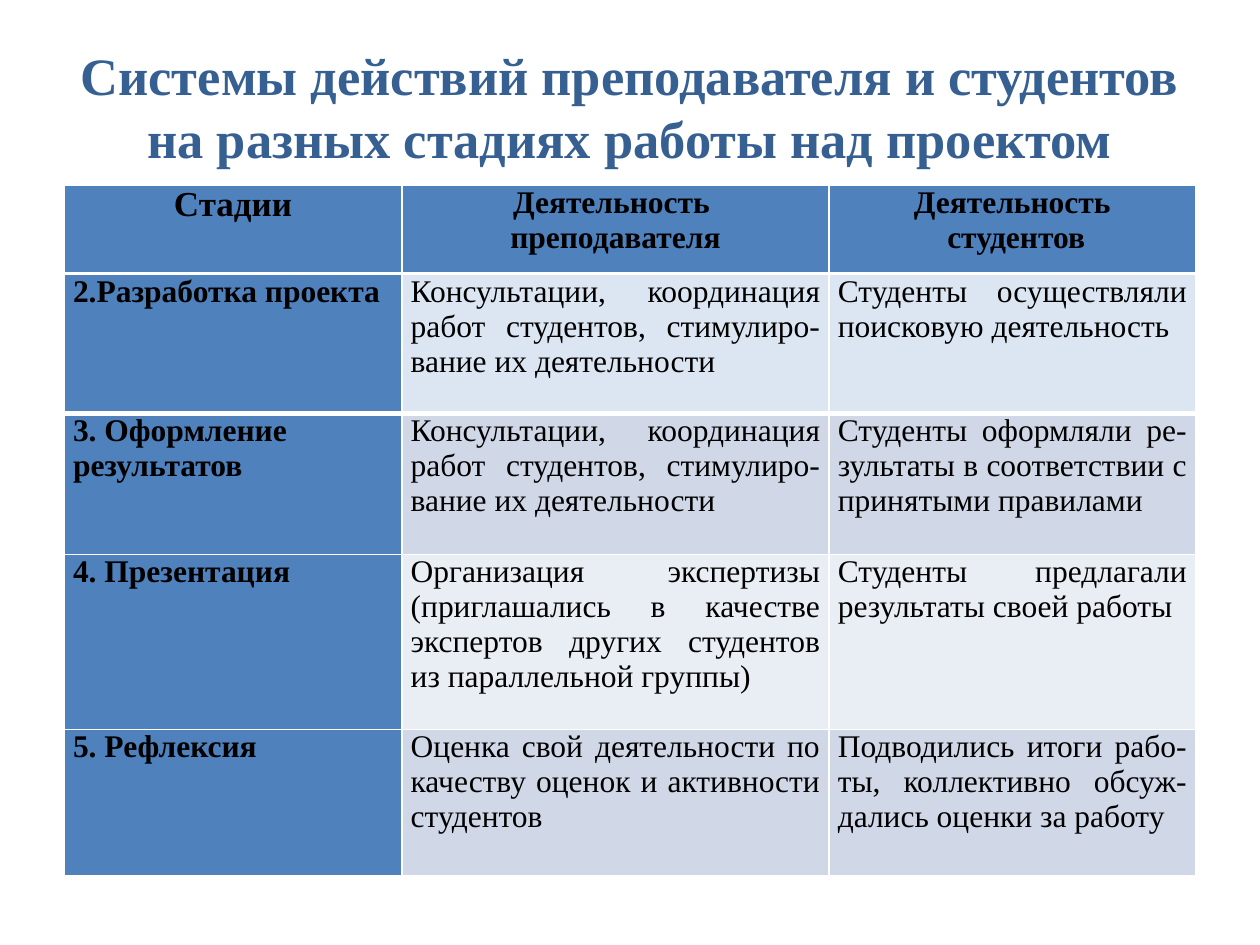
from pptx import Presentation
from pptx.dml.color import RGBColor
from pptx.enum import text
from pptx.oxml import parse_xml
from pptx.oxml.ns import nsdecls
from pptx.util import Inches, Pt

FONT = "Times New Roman"
CENTER, LEFT, JUSTIFY = (text.PP_ALIGN.CENTER, text.PP_ALIGN.LEFT,
                         text.PP_ALIGN.JUSTIFY)
STAGE_FILL = "4F81BD"
COLUMN_WIDTHS = (2.68, 3.39, 2.91)
HEADINGS = ("Стадии", "Деятельность \nпреподавателя", "Деятельность\n студентов")
SUPPORT = "Консультации, координация работ студентов, стимулиро-вание их деятельности"
# height, fill, stage, teacher's activity, students' activity
STAGES = (
    (1.1, "DCE6F2", "2.Разработка проекта", SUPPORT,
     "Студенты осуществляли поисковую деятельность"),
    (1.12, "D0D8E8", "3. Оформление результатов", SUPPORT,
     "Студенты оформляли ре-зультаты в соответствии с принятыми правилами"),
    (1.39, "E9EDF4", "4. Презентация",
     "Организация экспертизы (приглашались в качестве экспертов других "
     "студентов из параллельной группы)",
     "Студенты предлагали результаты своей работы"),
    (1.16, "D0D8E8", "5. Рефлексия",
     "Оценка свой деятельности по качеству оценок и активности студентов",
     "Подводились итоги рабо-ты, коллективно обсуж-дались оценки за работу"),
)


def rgb(value):
    return RGBColor.from_string(value)


def write(frame, wording, align, size, bold, color="000000"):
    frame.text = wording
    for paragraph in frame.paragraphs:
        paragraph.alignment = align
        formats = {"name": FONT, "size": Pt(size), "bold": bold}
        for run in paragraph.runs:
            for key, value in formats.items():
                setattr(run.font, key, value)
            run.font.color.rgb = rgb(color)


def style_cell(cell, fill, side_margin, bottom_line):
    margins = {"margin_left": side_margin, "margin_right": side_margin,
               "margin_top": 0, "margin_bottom": 0}
    for key, value in margins.items():
        setattr(cell, key, Inches(value))
    properties = cell._tc.get_or_add_tcPr()
    for side, width in (("L", 1), ("R", 1), ("T", 1), ("B", bottom_line)):
        properties.append(parse_xml(
            f'<a:ln{side} {nsdecls("a")} w="{Pt(width)}"><a:solidFill>'
            f'<a:srgbClr val="FFFFFF"/></a:solidFill></a:ln{side}>'))
    cell.fill.solid()
    cell.fill.fore_color.rgb = rgb(fill)


def add_grid(slide, left, top, heights):
    grid = slide.shapes.add_table(
        len(heights), len(COLUMN_WIDTHS), Inches(left), Inches(top),
        Inches(sum(COLUMN_WIDTHS)), Inches(sum(heights))).table
    for column, width in zip(grid.columns, COLUMN_WIDTHS):
        column.width = Inches(width)
    for row, height in zip(grid.rows, heights):
        row.height = Inches(height)
    return grid


def add_title(slide, left, top, width, height):
    frame = slide.shapes.add_textbox(
        Inches(left), Inches(top), Inches(width), Inches(height)).text_frame
    frame.word_wrap = True
    frame.vertical_anchor = text.MSO_ANCHOR.MIDDLE
    write(frame, "Системы действий преподавателя и студентов на разных стадиях "
          "работы над проектом", CENTER, 30, True, "376092")


def add_headings(slide, left, top, height):
    grid = add_grid(slide, left, top, [height])
    for column, heading in enumerate(HEADINGS):
        cell = grid.cell(0, column)
        style_cell(cell, STAGE_FILL, 0.06, 3)
        write(cell.text_frame, heading, CENTER, 18 if column else 20, True)


def add_stages(slide, left, top):
    grid = add_grid(slide, left, top, [stage[0] for stage in STAGES])
    for row, (_, fill, *wordings) in enumerate(STAGES):
        for column, wording in enumerate(wordings):
            cell = grid.cell(row, column)
            style_cell(cell, fill if column else STAGE_FILL, 0.07,
                       1 if row else 3)
            write(cell.text_frame, wording, JUSTIFY if column else LEFT, 18,
                  column == 0)


def main():
    deck = Presentation()
    deck.slide_width, deck.slide_height = Inches(10), Inches(7.5)
    slide = deck.slides.add_slide(deck.slide_layouts[6])
    add_title(slide, 0.5, 0.13, 9, 1.42)
    add_headings(slide, 0.51, 1.47, 0.71)
    add_stages(slide, 0.51, 2.18)
    deck.save("out.pptx")


if __name__ == "__main__":
    main()
